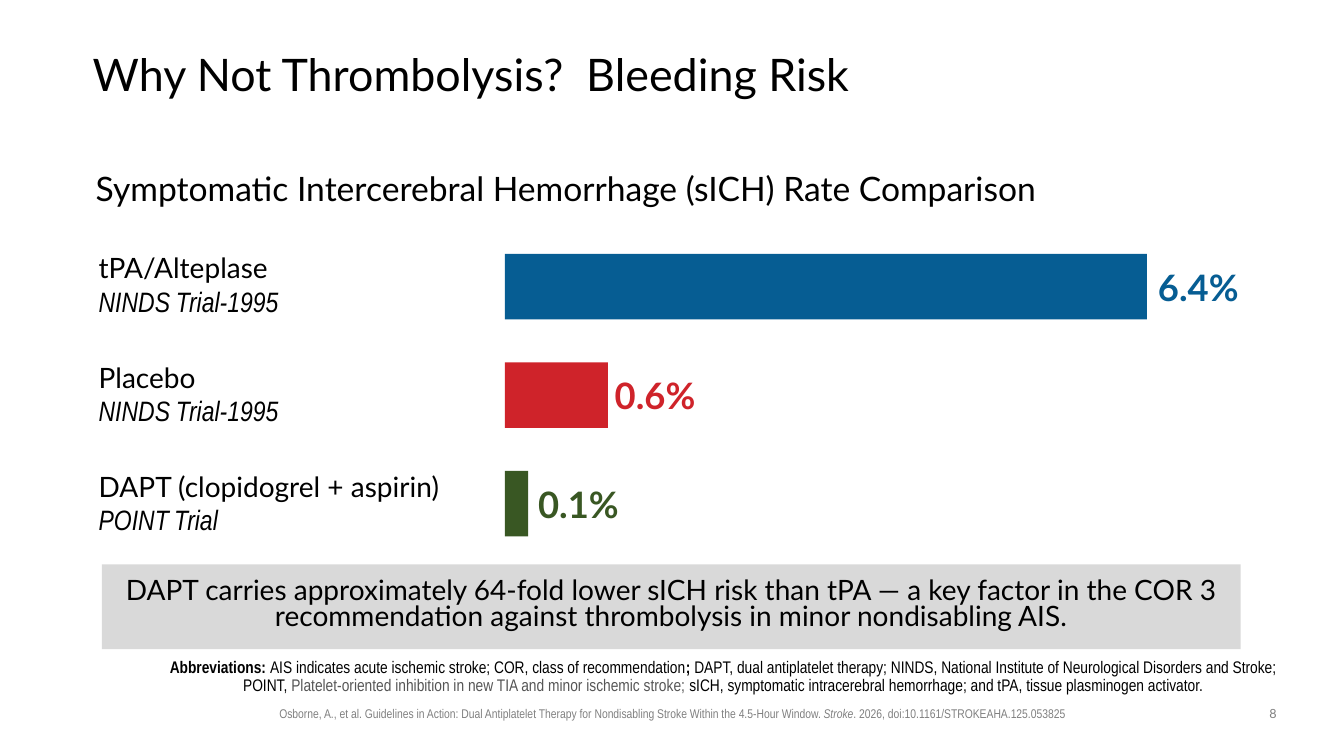
from pptx import Presentation
from pptx import util as u
from pptx.dml import color
from pptx.enum import shapes, text

HUES = {
    "ink": "000000", "blue": "065D93", "red": "CF232A", "green": "395723",
    "pale": "D9D9D9", "gray": "808080", "dim": "555555",
}
LATO, SLIM = "Lato", "Arial Narrow"
LEFT, MID = text.PP_ALIGN.LEFT, text.PP_ALIGN.CENTER
PAD = (7.2, 3.6, 7.2, 3.6)


class Deck:
    def __init__(self, wide, high):
        self.file = Presentation()
        self.file.slide_width, self.file.slide_height = u.Pt(wide), u.Pt(high)
        self.slide = self.file.slides.add_slide(self.file.slide_layouts[6])

    def hue(self, name):
        return color.RGBColor.from_string(HUES[name])

    def style(self, run, size, face=LATO, hue="ink", bold=False, slant=False):
        font = run.font
        font.size, font.name = u.Pt(size), face
        font.bold, font.italic = bold, slant
        font.color.rgb = self.hue(hue)

    def bar(self, spot, hue):
        rect = self.slide.shapes.add_shape(
            shapes.MSO_SHAPE.RECTANGLE, *map(u.Pt, spot))
        rect.shadow.inherit = False
        rect.fill.solid()
        rect.fill.fore_color.rgb = self.hue(hue)
        rect.line.fill.background()

    def frame(self, spot, pad=PAD, anchor=text.MSO_ANCHOR.TOP):
        frame = self.slide.shapes.add_textbox(*map(u.Pt, spot)).text_frame
        frame.word_wrap = True
        frame.vertical_anchor = anchor
        frame.margin_left, frame.margin_top, frame.margin_right, frame.margin_bottom = map(u.Pt, pad)
        return frame

    def label(self, spot, words, size, align=LEFT, lead=1.0, pad=PAD,
              anchor=text.MSO_ANCHOR.TOP, **look):
        frame = self.frame(spot, pad, anchor)
        frame.text = words
        para = frame.paragraphs[0]
        para.alignment, para.line_spacing = align, lead
        self.style(para.runs[0], size, **look)

    def mixed(self, spot, parts, size, lead=1.0, pad=PAD,
              anchor=text.MSO_ANCHOR.TOP, **base):
        para = self.frame(spot, pad, anchor).paragraphs[0]
        para.alignment, para.line_spacing = MID, lead
        for words, look in parts:
            run = para.add_run()
            run.text = words
            self.style(run, size, **{**base, **look})

    def pairs(self, spot, rows, size, gap):
        frame = self.frame(spot)
        frame.text = "\n".join("\v".join(row) for row in rows)
        for para in frame.paragraphs:
            para.space_after = u.Pt(gap)
            name, trial = para.runs
            self.style(name, size)
            self.style(trial, size, SLIM, slant=True)


def main():
    deck = Deck(960, 540)
    deck.label((66.2, 28.8, 828, 51.8), "Why Not Thrombolysis?  Bleeding Risk", 32,
               lead=0.9, pad=(0, 0, 0, 0), anchor=text.MSO_ANCHOR.MIDDLE)
    deck.label((68.4, 116.6, 856, 36),
               "Symptomatic Intercerebral Hemorrhage (sICH) Rate Comparison", 24,
               pad=(0, 3.6, 7.2, 3.6))

    rates = [
        ("tPA/Alteplase", "NINDS Trial-1995", "6.4%", "blue", 458.6, 820),
        ("Placebo", "NINDS Trial-1995", "0.6%", "red", 73.6, 432),
        ("DAPT (clopidogrel + aspirin)", "POINT Trial", "0.1%", "green", 16.6, 377.3),
    ]
    for i, (name, trial, rate, hue, wide, left) in enumerate(rates):
        top = 181.4 + 77.5 * i
        deck.bar((360.7, top, wide, 46.8), hue)
        deck.label((left, top + 4.4, 90, 38.9), rate, 26, hue=hue, bold=True)
    deck.pairs((63.4, 175.7, 292.3, 213), [row[:2] for row in rates], 20, 30)

    deck.bar((72.7, 403.2, 813.6, 60.5), "pale")
    deck.label((72.7, 409.7, 813.6, 46.8),
               "DAPT carries approximately 64-fold lower sICH risk than tPA — a key factor "
               "in the COR 3 recommendation against thrombolysis in minor nondisabling AIS.",
               20, MID, 0.8)

    deck.mixed((106.6, 473.8, 827.3, 26.6), [
        ("Abbreviations: ", {"bold": True}),
        ("AIS indicates acute ischemic stroke; COR, class of recommendation", {}),
        ("; ", {"bold": True}),
        ("DAPT, dual antiplatelet therapy; NINDS, National Institute of "
         "Neurological Disorders and Stroke; POINT, ", {}),
        ("Platelet-oriented inhibition in new TIA and minor ischemic stroke; ",
         {"hue": "dim"}),
        ("sICH, symptomatic intracerebral hemorrhage; and tPA, "
         "tissue plasminogen activator.", {}),
    ], 12, 0.9, (0, 3.6, 7.2, 3.6), text.MSO_ANCHOR.BOTTOM, face=SLIM)
    deck.mixed((169.9, 500.4, 620.6, 18), [
        ("Osborne, A., et al. Guidelines in Action: Dual Antiplatelet Therapy for "
         "Nondisabling Stroke Within the 4.5-Hour Window. ", {}),
        ("Stroke", {"slant": True}),
        (". 2026, doi:10.1161/STROKEAHA.125.053825", {}),
    ], 9, face=SLIM, hue="gray")
    deck.label((894.2, 500.4, 30.2, 18.7), "8", 9, MID, hue="gray")
    deck.file.save("out.pptx")


if __name__ == "__main__":
    main()
